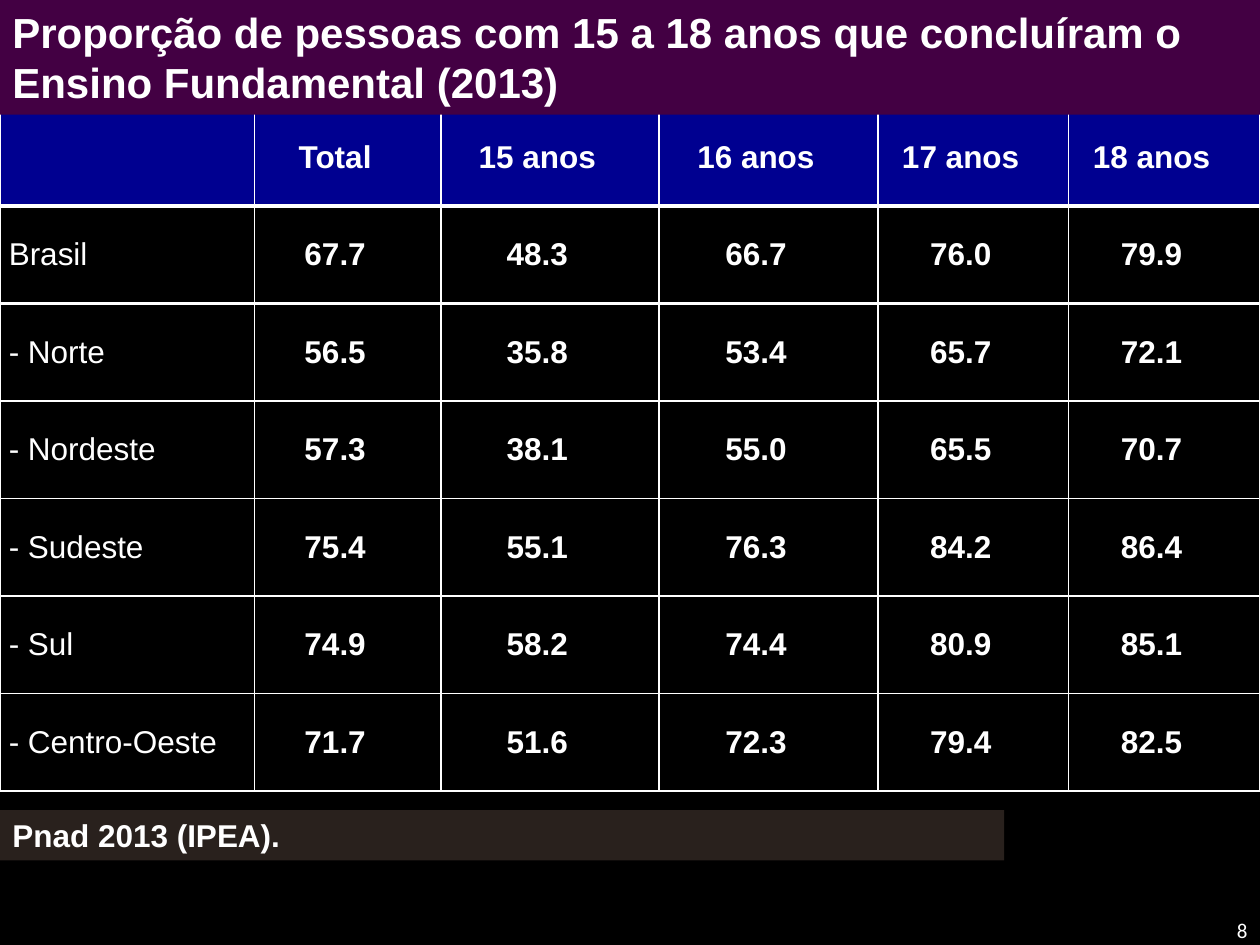
from lxml.etree import SubElement
from pptx import Presentation
from pptx.dml.color import RGBColor
from pptx.enum.shapes import MSO_SHAPE
from pptx.enum.text import MSO_ANCHOR as Anchor, PP_ALIGN as Align
from pptx.oxml.ns import qn
from pptx.util import Inches, Pt

WHITE = RGBColor(0xFF, 0xFF, 0xFF)
BLACK = RGBColor(0x00, 0x00, 0x00)
NAVY = RGBColor(0x00, 0x00, 0x90)
PURPLE = RGBColor(0x43, 0x00, 0x43)
BROWN = RGBColor(0x29, 0x21, 0x1D)

COLUMN_WIDTHS = [2.02, 1.48, 1.73, 1.74, 1.51, 1.52]
TABLE_TOP, TABLE_HEIGHT = 0.86, 5.42
ROWS = [
    ["", "Total", "15 anos", "16 anos", "17 anos", "18 anos"],
    ["Brasil", "67.7", "48.3", "66.7", "76.0", "79.9"],
    ["- Norte", "56.5", "35.8", "53.4", "65.7", "72.1"],
    ["- Nordeste", "57.3", "38.1", "55.0", "65.5", "70.7"],
    ["- Sudeste", "75.4", "55.1", "76.3", "84.2", "86.4"],
    ["- Sul", "74.9", "58.2", "74.4", "80.9", "85.1"],
    ["- Centro-Oeste", "71.7", "51.6", "72.3", "79.4", "82.5"],
]
# Width in points of the line under each row, where it is not 1
RULE_BELOW = {0: 3, 1: 1.5}


def write(frame, text, size, align, bold=True, font="Arial"):
    paragraph = frame.paragraphs[0]
    paragraph.alignment = align
    run = paragraph.add_run()
    run.text = text
    for name, value in {"name": font, "size": Pt(size), "bold": bold}.items():
        setattr(run.font, name, value)
    run.font.color.rgb = WHITE


def add_border(cell, side, width):
    """Put a white line on one side of a cell; call before setting its fill."""
    line = SubElement(cell._tc.get_or_add_tcPr(), qn(f"a:{side}"), w=str(Pt(width)))
    fill = SubElement(line, qn("a:solidFill"))
    SubElement(fill, qn("a:srgbClr"), val=str(WHITE))


presentation = Presentation()
presentation.slide_width = Inches(10)
presentation.slide_height = Inches(7.5)
slide = presentation.slides.add_slide(presentation.slide_layouts[6])
slide.background.fill.solid()
slide.background.fill.fore_color.rgb = BLACK

# Page number
page_number = slide.shapes.add_textbox(Inches(9.5), Inches(7.23), Inches(0.5), Inches(0.3))
page_number.text_frame.word_wrap = True
page_number.text_frame.vertical_anchor = Anchor.MIDDLE
write(page_number.text_frame, "8", 12, Align.RIGHT, bold=False, font="Calibri")

# Table of regions by age
table = slide.shapes.add_table(
    len(ROWS), len(COLUMN_WIDTHS), 0, Inches(TABLE_TOP), Inches(10), Inches(TABLE_HEIGHT)
).table
table.horz_banding = False
for column, width in zip(table.columns, COLUMN_WIDTHS):
    column.width = Inches(width)
for row in table.rows:
    row.height = Inches(TABLE_HEIGHT / len(ROWS))

for row_index, row_values in enumerate(ROWS):
    for column_index, value in enumerate(row_values):
        cell = table.cell(row_index, column_index)
        is_label = column_index == 0
        borders = {
            "lnL": 1,
            "lnR": 1,
            "lnT": RULE_BELOW.get(row_index - 1, 1),
            "lnB": RULE_BELOW.get(row_index, 1),
        }
        for side, width in borders.items():
            add_border(cell, side, width)
        cell.fill.solid()
        cell.fill.fore_color.rgb = NAVY if row_index == 0 else BLACK
        cell.vertical_anchor = Anchor.MIDDLE
        cell.margin_left = Inches(0.07)
        # Figures sit slightly left of the column's centre
        cell.margin_right = Inches(0.07 if is_label else 0.27)
        cell.margin_top = cell.margin_bottom = 0
        if value:
            write(cell.text_frame, value, 18,
                  Align.JUSTIFY if is_label else Align.CENTER, bold=not is_label)

# Title band and source band
BANDS = [
    (0, 10, 0.91, PURPLE, 24,
     "Proporção de pessoas com 15 a 18 anos que concluíram o Ensino Fundamental (2013)"),
    (6.43, 7.97, 0.4, BROWN, 18, "Pnad 2013 (IPEA)."),
]
for top, width, height, color, size, text in BANDS:
    band = slide.shapes.add_shape(
        MSO_SHAPE.RECTANGLE, 0, Inches(top), Inches(width), Inches(height))
    band.shadow.inherit = False
    band.fill.solid()
    band.fill.fore_color.rgb = color
    band.line.fill.background()
    band.text_frame.word_wrap = True
    band.text_frame.vertical_anchor = Anchor.TOP
    write(band.text_frame, text, size, Align.LEFT)

presentation.save("out.pptx")
